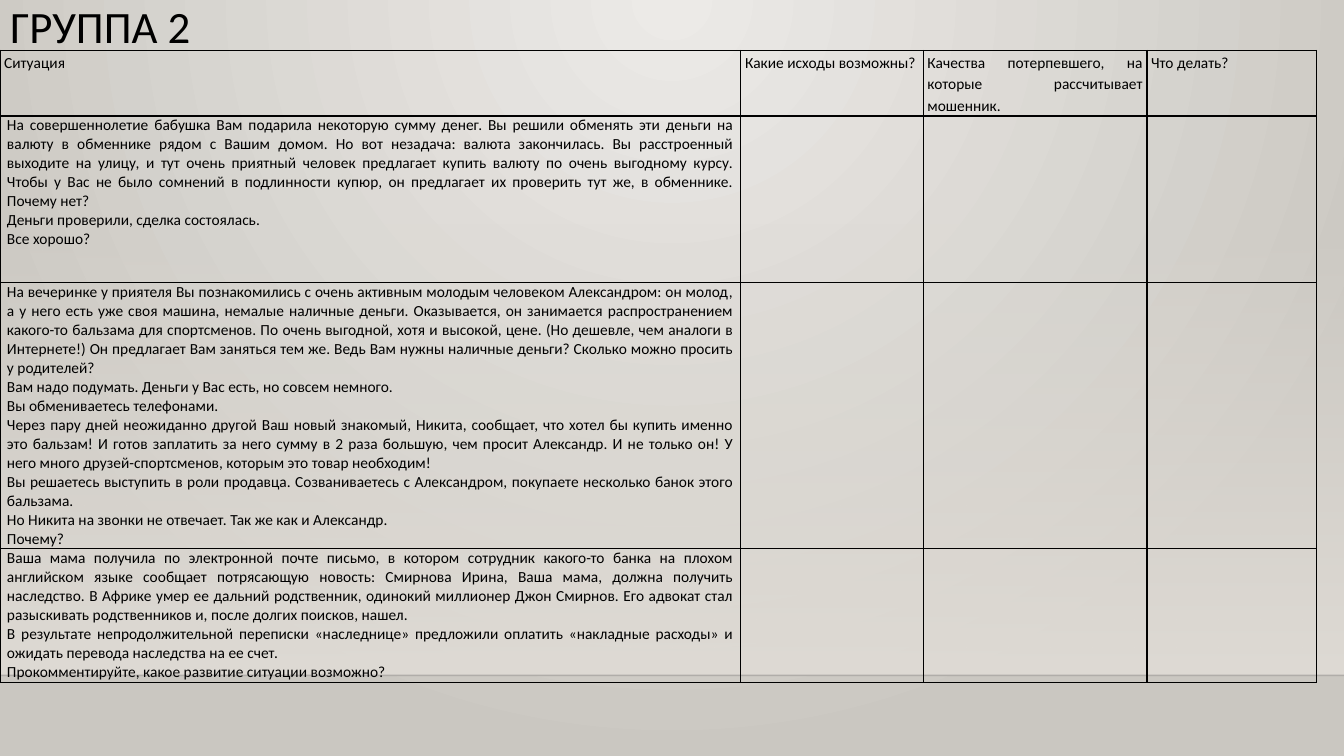
import pptx
import pptx.dml.color
import pptx.enum.shapes
import pptx.enum.text
import pptx.oxml
import pptx.oxml.ns
import pptx.util

Pt = pptx.util.Pt
qn = pptx.oxml.ns.qn
NS = pptx.oxml.ns.nsdecls("a")
FONT = "Calibri"

TITLE = "ГРУППА 2"
HEADS = [
    "Ситуация",
    "Какие исходы возможны?",
    "Качества потерпевшего, на которые рассчитывает мошенник.",
    "Что делать?",
]
CASES = [
    [
        "На совершеннолетие бабушка Вам подарила некоторую сумму денег. Вы решили обменять эти деньги на валюту в обменнике рядом с Вашим домом. Но вот незадача: валюта закончилась. Вы расстроенный выходите на улицу, и тут очень приятный человек предлагает купить валюту по очень выгодному курсу. Чтобы у Вас не было сомнений в подлинности купюр, он предлагает их проверить тут же, в обменнике. Почему нет?",
        "Деньги проверили, сделка состоялась.",
        "Все хорошо?",
    ],
    [
        "На вечеринке у приятеля Вы познакомились с очень активным молодым человеком Александром: он молод, а у него есть уже своя машина, немалые наличные деньги. Оказывается, он занимается распространением какого-то бальзама для спортсменов. По очень выгодной, хотя и высокой, цене. (Но дешевле, чем аналоги в Интернете!) Он предлагает Вам заняться тем же. Ведь Вам нужны наличные деньги? Сколько можно просить у родителей?",
        "Вам надо подумать. Деньги у Вас есть, но совсем немного.",
        "Вы обмениваетесь телефонами.",
        "Через пару дней неожиданно другой Ваш новый знакомый, Никита, сообщает, что хотел бы купить именно это бальзам! И готов заплатить за него сумму в 2 раза большую, чем просит Александр. И не только он! У него много друзей-спортсменов, которым это товар необходим!",
        "Вы решаетесь выступить в роли продавца. Созваниваетесь с Александром, покупаете несколько банок этого бальзама.",
        "Но Никита на звонки не отвечает. Так же как и Александр.",
        "Почему?",
    ],
    [
        "Ваша мама получила по электронной почте письмо, в котором сотрудник какого-то банка на плохом английском языке сообщает потрясающую новость: Смирнова Ирина, Ваша мама, должна получить наследство. В Африке умер ее дальний родственник, одинокий миллионер Джон Смирнов. Его адвокат стал разыскивать родственников и, после долгих поисков, нашел.",
        "В результате непродолжительной переписки «наследнице» предложили оплатить «накладные расходы» и ожидать перевода наследства на ее счет.",
        "Прокомментируйте, какое развитие ситуации возможно?",
    ],
]
WIDE, HIGH = 960, 540
FLOOR = 482.4
COLS = [529.2, 130.3, 159.8, 121]
ROWS = [46.1, 118.8, 182.2, 95.8]


def color(code):
    return pptx.dml.color.RGBColor.from_string(code)


def blend(fill, first, last):
    fill.gradient()
    for stop, code, place in zip(fill.gradient_stops, (first, last), (0, 1)):
        stop.color.rgb = color(code)
        stop.position = place


def fade(node, share):
    """Set the opacity, in percent, of the first colour inside node."""
    tint = next(node.iter(qn("a:srgbClr")))
    tint.append(pptx.oxml.parse_xml(f'<a:alpha {NS} val="{share * 1000}"/>'))


def style(para, size):
    para.font.name = FONT
    para.font.size = Pt(size)
    para.font.color.rgb = color("000000")


def border(cell):
    props = cell._tc.get_or_add_tcPr()
    for side in "LRTB":
        props.append(pptx.oxml.parse_xml(
            f'<a:ln{side} {NS} w="{Pt(1)}"><a:solidFill><a:srgbClr val="000000"/>'
            f'</a:solidFill></a:ln{side}>'))
    cell.fill.background()


def write(cell, lines, inset, gap):
    cell.margin_left = cell.margin_right = Pt(inset)
    cell.margin_top = cell.margin_bottom = 0
    cell.text = "\n".join(lines)
    for para in cell.text_frame.paragraphs:
        para.alignment = pptx.enum.text.PP_ALIGN.JUSTIFY
        para.line_spacing = gap
        style(para, 11)


def paint(slide):
    blend(slide.background.fill, "ECEAE7", "CAC7C1")
    grad = next(slide._element.iter(qn("a:gradFill")))
    grad.replace(grad.find(qn("a:lin")), pptx.oxml.parse_xml(
        f'<a:path {NS} path="circle">'
        '<a:fillToRect l="43000" t="0" r="43000" b="100000"/></a:path>'))

    top = 159.1
    wall = slide.shapes.add_shape(
        pptx.enum.shapes.MSO_SHAPE.RECTANGLE, 0, Pt(top), Pt(WIDE), Pt(FLOOR - top))
    wall.shadow.inherit = False
    wall.line.fill.background()
    blend(wall.fill, "DFDBD5", "DFDBD5")
    wall.fill.gradient_angle = 270
    fade(wall._element.spPr, 0)

    edge = slide.shapes.add_connector(
        pptx.enum.shapes.MSO_CONNECTOR.STRAIGHT, 0, Pt(FLOOR), Pt(WIDE), Pt(FLOOR))
    edge.line.width = Pt(1)
    edge.line.color.rgb = color("000001")
    fade(edge._element.spPr, 20)
    edge._element.spPr.append(pptx.oxml.parse_xml(f"<a:effectLst {NS}/>"))


def head(slide):
    title = slide.shapes.title
    slide.shapes._spTree.append(title._element)
    title.left, title.top, title.width, title.height = 0, 0, Pt(828), Pt(104.4)
    title.text = TITLE
    title.text_frame.vertical_anchor = pptx.enum.text.MSO_ANCHOR.TOP
    para = title.text_frame.paragraphs[0]
    para.alignment = pptx.enum.text.PP_ALIGN.LEFT
    para.line_spacing = 0.9
    style(para, 32)


def grid(slide):
    table = slide.shapes.add_table(
        len(ROWS), len(COLS), 0, Pt(36), Pt(sum(COLS)), Pt(sum(ROWS))).table
    table.first_row = table.horz_banding = False
    for col, width in zip(table.columns, COLS):
        col.width = Pt(width)
    for row, height in zip(table.rows, ROWS):
        row.height = Pt(height)
    for cell in table.iter_cells():
        border(cell)
    for c, text in enumerate(HEADS):
        write(table.cell(0, c), [text], 3, 1.15)
    for r, lines in enumerate(CASES, 1):
        write(table.cell(r, 0), lines, 5, 1.0)


def main():
    deck = pptx.Presentation()
    deck.slide_width, deck.slide_height = Pt(WIDE), Pt(HIGH)
    slide = deck.slides.add_slide(deck.slide_layouts[5])
    paint(slide)
    head(slide)
    grid(slide)
    deck.save("out.pptx")


if __name__ == "__main__":
    main()
